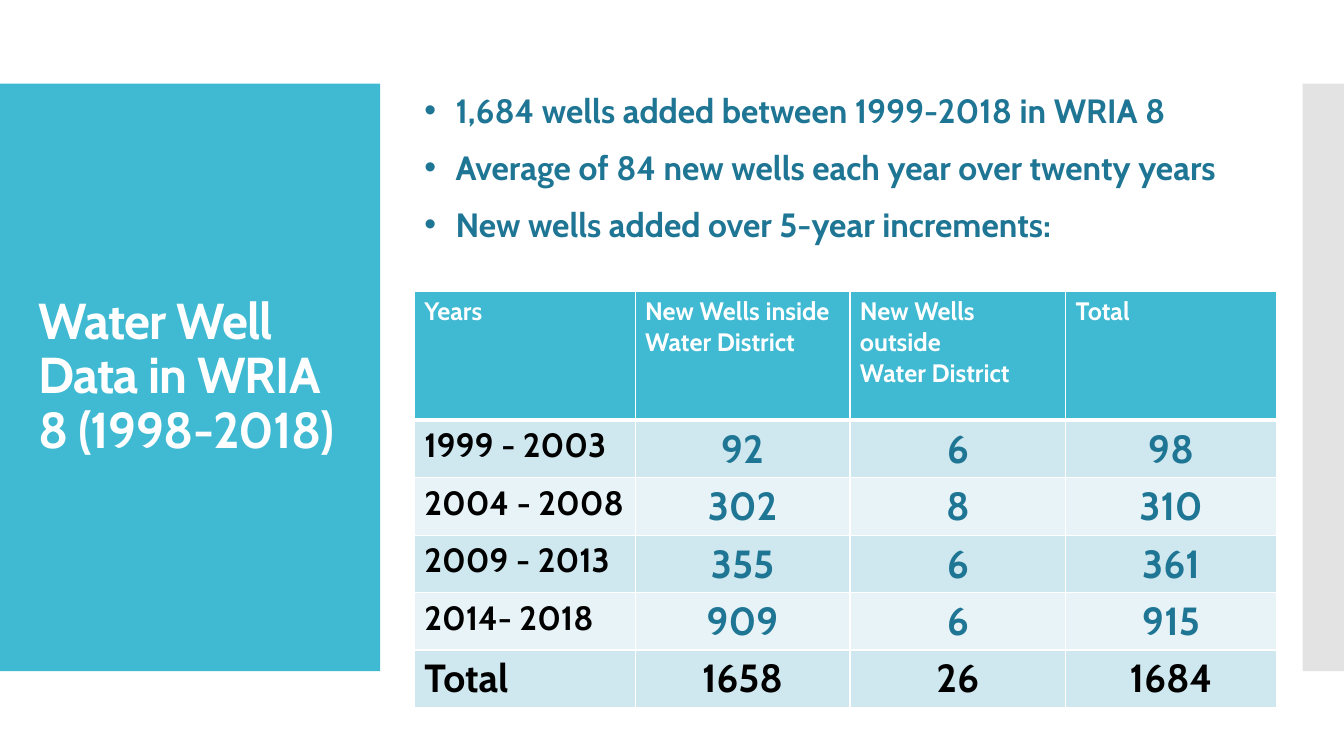
from dataclasses import dataclass

from lxml import etree
from pptx import Presentation
from pptx.dml.color import RGBColor
from pptx.enum import shapes, text
from pptx.oxml import ns
from pptx.util import Inches, Pt

FONT = "Cabin"
TEAL, DEEP_TEAL, WHITE, BLACK = "40BAD2", "1E7594", "FFFFFF", "000000"
GRAY = "C8C8C8"
BANDS = ("CFE7EE", "E8F3F7")


@dataclass
class Panel:
    left: float
    width: float
    color: str
    opacity: int = 100


PANELS = [Panel(0, 3.77, TEAL), Panel(12.92, 0.42, GRAY, 50)]
FINDINGS = [
    "1,684 wells added between 1999-2018 in WRIA 8",
    "Average of 84 new wells each year over twenty years",
    "New wells added over 5-year increments:",
]
WELLS = [
    ("Years", "New Wells inside\nWater District", "New Wells outside\nWater District", "Total"),
    ("1999 - 2003", "92", "6", "98"),
    ("2004 - 2008", "302", "8", "310"),
    ("2009 - 2013", "355", "6", "361"),
    ("2014- 2018", "909", "6", "915"),
    ("Total", "1658", "26", "1684"),
]
COLUMN_WIDTHS = (2.19, 2.13, 2.14, 2.09)
ROW_HEIGHTS = (1.28, 0.57, 0.57, 0.57, 0.57, 0.56)


def rgb(color: str) -> RGBColor:
    return RGBColor.from_string(color)


def style(paragraph, size: float, color: str) -> None:
    font = paragraph.font
    font.name, font.size, font.bold = FONT, Pt(size), True
    font.color.rgb = rgb(color)


def add_panel(slide, panel: Panel) -> None:
    box = slide.shapes.add_shape(
        shapes.MSO_SHAPE.RECTANGLE,
        Inches(panel.left), Inches(0.83), Inches(panel.width), Inches(5.83))
    box.shadow.inherit = False
    box.line.fill.background()
    box.fill.solid()
    box.fill.fore_color.rgb = rgb(panel.color)
    if panel.opacity < 100:
        color = box._element.spPr.find(ns.qn("a:solidFill"))[0]
        etree.SubElement(color, ns.qn("a:alpha"), val=str(panel.opacity * 1000))


def add_bullet(paragraph) -> None:
    properties = paragraph._p.get_or_add_pPr()
    properties.set("marL", str(Inches(0.31)))
    properties.set("indent", str(-Inches(0.31)))
    etree.SubElement(properties, ns.qn("a:buFont"), typeface="Arial")
    etree.SubElement(properties, ns.qn("a:buChar"), char="•")


def add_borders(cell, bottom: float) -> None:
    properties = cell._tc.get_or_add_tcPr()
    for side, width in (("L", 1), ("R", 1), ("T", 1), ("B", bottom)):
        line = etree.SubElement(properties, ns.qn(f"a:ln{side}"), w=str(Pt(width)))
        fill = etree.SubElement(line, ns.qn("a:solidFill"))
        etree.SubElement(fill, ns.qn("a:srgbClr"), val=WHITE)


def cell_style(row: int, column: int) -> tuple[int, str]:
    if row == 0:
        return 18, WHITE
    if row == len(WELLS) - 1:
        return 28, BLACK
    return (24, BLACK) if column == 0 else (28, DEEP_TEAL)


def add_well_table(slide) -> None:
    table = slide.shapes.add_table(
        len(WELLS), len(COLUMN_WIDTHS), Inches(4.11), Inches(2.89),
        Inches(sum(COLUMN_WIDTHS)), Inches(sum(ROW_HEIGHTS))).table
    for column, width in zip(table.columns, COLUMN_WIDTHS):
        column.width = Inches(width)
    for row, height in zip(table.rows, ROW_HEIGHTS):
        row.height = Inches(height)
    for r, values in enumerate(WELLS):
        for c, value in enumerate(values):
            cell = table.cell(r, c)
            cell.text = value
            add_borders(cell, bottom=3 if r == 0 else 1)
            cell.fill.solid()
            cell.fill.fore_color.rgb = rgb(BANDS[(r - 1) % 2] if r else TEAL)
            for paragraph in cell.text_frame.paragraphs:
                style(paragraph, *cell_style(r, c))
                if r and c:
                    paragraph.alignment = text.PP_ALIGN.CENTER


def add_findings(slide) -> None:
    frame = slide.shapes.add_textbox(
        Inches(4.11), Inches(0.84), Inches(9.14), Inches(2.05)).text_frame
    frame.word_wrap = True
    frame.text = "\n".join(FINDINGS)
    for i, paragraph in enumerate(frame.paragraphs):
        style(paragraph, 24, DEEP_TEAL)
        paragraph.space_before = Pt(12 if i else 0)
        add_bullet(paragraph)


def set_title(slide) -> None:
    title = slide.shapes.title
    title.left, title.top = Inches(0.28), Inches(1.23)
    title.width, title.height = Inches(3.35), Inches(5.03)
    frame = title.text_frame
    frame.text = "Water Well Data in WRIA 8 (1998-2018)"
    frame.word_wrap = True
    frame.auto_size = text.MSO_AUTO_SIZE.NONE
    frame.vertical_anchor = text.MSO_ANCHOR.MIDDLE
    heading = frame.paragraphs[0]
    heading.alignment = text.PP_ALIGN.LEFT
    heading.line_spacing = 0.9
    style(heading, 36, WHITE)
    heading.runs[0]._r.get_or_add_rPr().set("spc", "-60")
    # Bring the title in front of the side panel
    slide.shapes._spTree.append(title._element)


def main() -> None:
    deck = Presentation()
    deck.slide_width, deck.slide_height = Inches(13.33), Inches(7.5)
    slide = deck.slides.add_slide(deck.slide_layouts[5])

    # Side panels and title
    for panel in PANELS:
        add_panel(slide, panel)
    set_title(slide)

    # Findings and well counts
    add_findings(slide)
    add_well_table(slide)

    deck.save("out.pptx")


if __name__ == "__main__":
    main()
